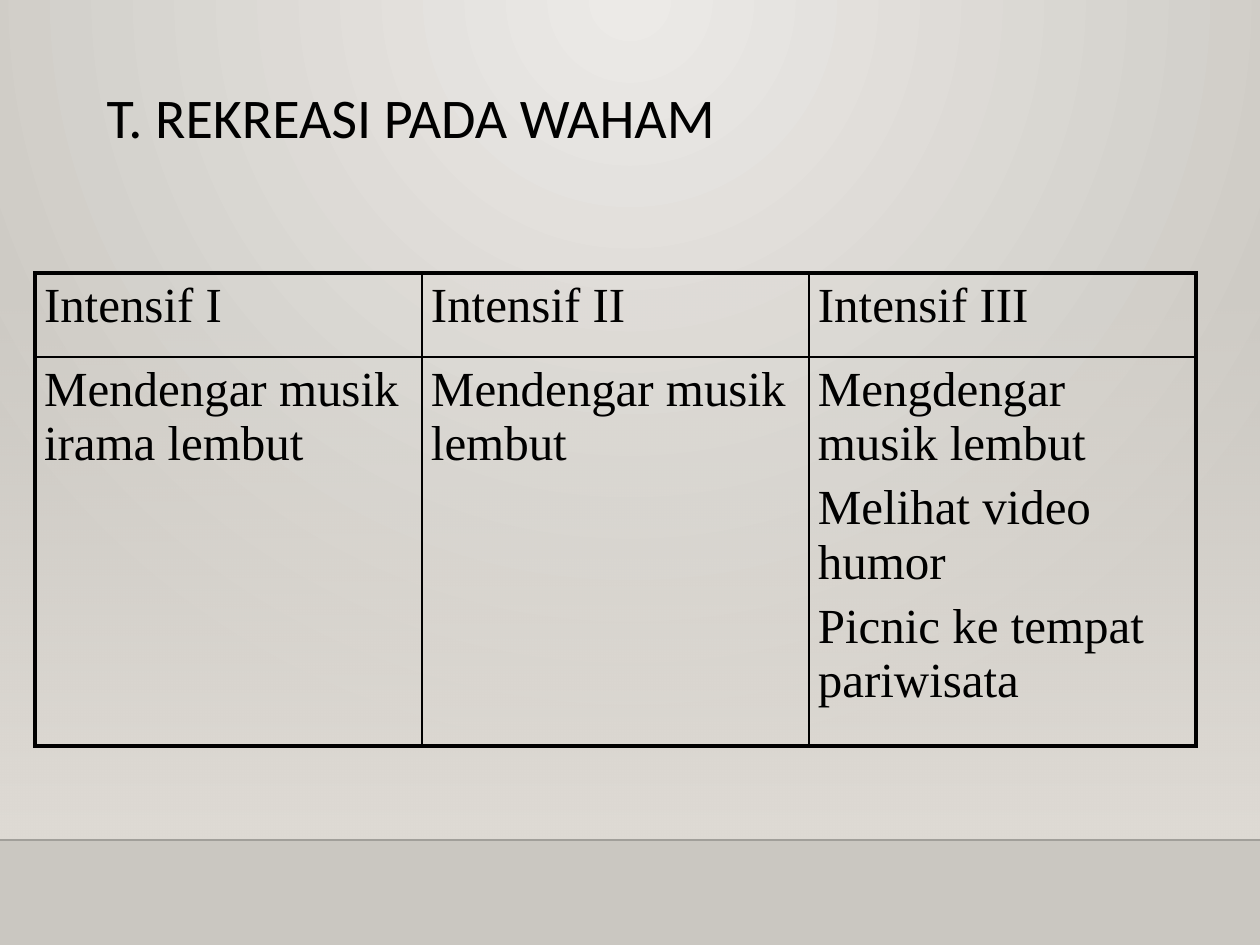
import dataclasses

import lxml.etree
import pptx
import pptx.dml.color
import pptx.enum.shapes
import pptx.enum.text
import pptx.oxml.ns
import pptx.util

RGB = pptx.dml.color.RGBColor
BLACK = RGB(0x00, 0x00, 0x00)
PALE = RGB(0xEC, 0xEA, 0xE7)
GREY = RGB(0xCA, 0xC7, 0xC1)
SAND = RGB(0xDF, 0xDB, 0xD5)

SCALE = 914400 / 126
WIDE, HIGH = 1260, 945
FLOOR = 840
THICK, THIN = 2.25, 1


@dataclasses.dataclass(frozen=True)
class Box:
    left: int
    top: int
    width: int
    height: int

    def emu(self) -> list[int]:
        return [px(side) for side in dataclasses.astuple(self)]


@dataclasses.dataclass(frozen=True)
class Column:
    head: str
    items: tuple[str, ...]


COLUMNS = (
    Column("Intensif I", ("Mendengar musik irama lembut",)),
    Column("Intensif II", ("Mendengar musik lembut",)),
    Column("Intensif III", ("Mengdengar musik lembut", "Melihat video humor",
                            "Picnic ke tempat pariwisata")),
)
ROWS = (84, 389)
COL = 387
GRID = Box(35, 273, COL * len(COLUMNS), sum(ROWS))


def px(count: float) -> int:
    return round(count * SCALE)


def add(parent, tag: str, **attrs):
    return lxml.etree.SubElement(parent, pptx.oxml.ns.qn(tag), attrs)


def write(frame, lines: tuple[str, ...], *, size: float, font: str,
          color: RGB = BLACK, gap: float = 0, lead: float = 1) -> None:
    """Fill a text frame, one paragraph a line, with gap points between them."""
    for num, line in enumerate(lines):
        para = frame.paragraphs[0] if num == 0 else frame.add_paragraph()
        para.alignment = pptx.enum.text.PP_ALIGN.LEFT
        para.line_spacing = lead
        if num:
            para.space_before = pptx.util.Pt(gap)
        run = para.add_run()
        run.text = line
        run.font.size = pptx.util.Pt(size)
        run.font.name = font
        run.font.color.rgb = color


def blend(fill, first: RGB, last: RGB) -> None:
    fill.gradient()
    for stop, color, place in zip(fill.gradient_stops, (first, last), (0, 1)):
        stop.color.rgb = color
        stop.position = place


def paint_back(slide) -> None:
    """Give the slide a round glow from the middle of its top edge."""
    fill = slide.background.fill
    blend(fill, PALE, GREY)
    grad = next(slide.element.iter(pptx.oxml.ns.qn("a:gradFill")))
    grad.remove(grad.find(pptx.oxml.ns.qn("a:lin")))
    glow = add(grad, "a:path", path="circle")
    add(glow, "a:fillToRect", l="43000", t="0", r="43000", b="100000")


def draw_wall(slide) -> None:
    """Draw the band that fades in downwards to the floor line."""
    top = 277
    wall = slide.shapes.add_shape(pptx.enum.shapes.MSO_SHAPE.RECTANGLE,
                                  *Box(0, top, WIDE, FLOOR - 1 - top).emu())
    wall.shadow.inherit = False
    wall.line.fill.background()
    blend(wall.fill, SAND, SAND)
    wall.fill.gradient_angle = 270
    tint = next(wall.element.iter(pptx.oxml.ns.qn("a:srgbClr")))
    add(tint, "a:alpha", val="0")


def draw_floor(slide) -> None:
    line = slide.shapes.add_connector(pptx.enum.shapes.MSO_CONNECTOR.STRAIGHT,
                                      0, px(FLOOR), px(WIDE), px(FLOOR))
    line.line.width = pptx.util.Pt(1)
    line.line.color.rgb = BLACK
    tint = next(line.element.iter(pptx.oxml.ns.qn("a:srgbClr")))
    add(tint, "a:alpha", val="20000")
    add(line.element.spPr, "a:effectLst")


def draw_title(slide, text: str) -> None:
    title = slide.shapes.title
    title.left, title.top, title.width, title.height = Box(94, 84, 1071, 158).emu()
    frame = title.text_frame
    frame.auto_size = pptx.enum.text.MSO_AUTO_SIZE.NONE
    frame.vertical_anchor = pptx.enum.text.MSO_ANCHOR.TOP
    write(frame, (text,), size=32, font="Calibri", lead=0.9)


def edge(cell, side: str, width: float) -> None:
    line = add(cell._tc.get_or_add_tcPr(), f"a:ln{side}",
               w=str(pptx.util.Pt(width)))
    add(add(line, "a:solidFill"), "a:srgbClr", val=str(BLACK))


def draw_cell(cell, lines: tuple[str, ...], row: int, col: int) -> None:
    """Write a cell and rule it, thick where it meets the table's rim."""
    cell.margin_left = cell.margin_right = px(9)
    cell.margin_top = cell.margin_bottom = px(6)
    write(cell.text_frame, lines, size=28, font="Times New Roman", gap=5.6)
    rims = {"L": col == 0, "R": col == len(COLUMNS) - 1,
            "T": row == 0, "B": row == len(ROWS) - 1}
    for side, rim in rims.items():
        edge(cell, side, THICK if rim else THIN)
    cell.fill.background()


def draw_table(slide) -> None:
    table = slide.shapes.add_table(len(ROWS), len(COLUMNS), *GRID.emu()).table
    table.first_row = table.horz_banding = False
    for row, height in enumerate(ROWS):
        table.rows[row].height = px(height)
    for col, data in enumerate(COLUMNS):
        table.columns[col].width = px(COL)
        for row, lines in enumerate(((data.head,), data.items)):
            draw_cell(table.cell(row, col), lines, row, col)


def main() -> None:
    deck = pptx.Presentation()
    deck.slide_width, deck.slide_height = px(WIDE), px(HIGH)
    slide = deck.slides.add_slide(deck.slide_layouts[5])
    paint_back(slide)
    draw_wall(slide)
    draw_floor(slide)
    draw_title(slide, "T. REKREASI PADA WAHAM")
    draw_table(slide)
    deck.save("out.pptx")


if __name__ == "__main__":
    main()
